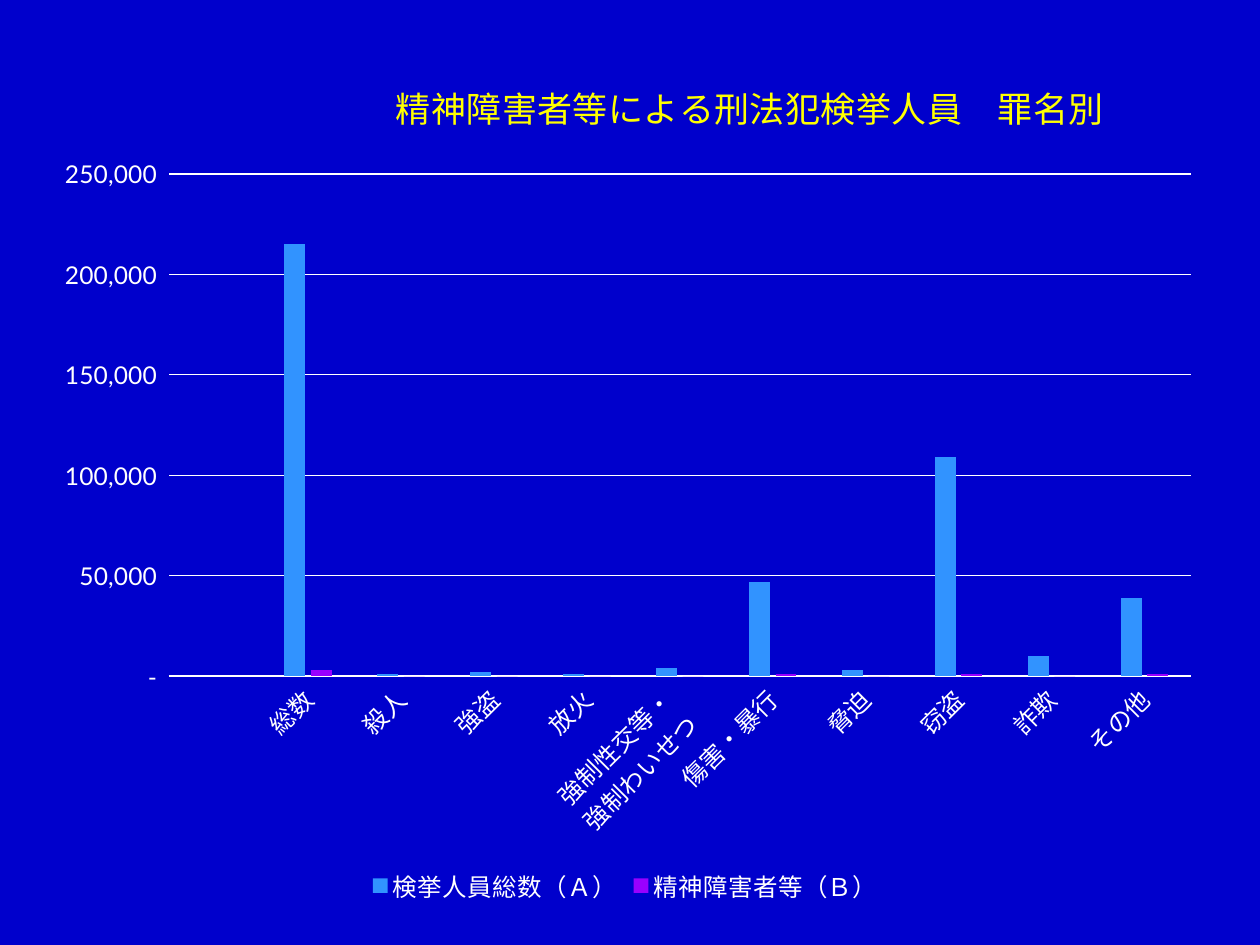
from dataclasses import dataclass

from lxml import etree
from pptx import Presentation
from pptx import util as u
from pptx.chart.data import CategoryChartData
from pptx.dml.color import RGBColor
from pptx.enum import chart as ch
from pptx.oxml.ns import qn


@dataclass(frozen=True)
class Theme:
    font: str = "Lato"
    background: str = "0000CC"
    ink: str = "FFFFFF"
    title: str = "FFFF00"
    series: tuple = ("3193FF", "9900FF")
    base_size: int = 10
    label_size: int = 14
    title_size: int = 20
    line_width: float = 0.75


THEME = Theme()
WIDTH, HEIGHT = u.Inches(10), u.Inches(7.5)
TITLE = "精神障害者等による刑法犯検挙人員　罪名別"
NUMBER_FORMAT = r'_(* #,##0_);_(* \(#,##0\);_(* "-"_);_(@_)'
CRIMES = {
    "": (None, None),
    "総数": (215000, 3000),
    "殺人": (1000, 0),
    "強盗": (2000, 0),
    "放火": (1000, 0),
    "強制性交等・\n強制わいせつ": (4000, 0),
    "傷害・暴行": (47000, 1000),
    "脅迫": (3000, 0),
    "窃盗": (109000, 1000),
    "詐欺": (10000, 0),
    "その他": (39000, 1000),
}
SERIES_NAMES = ("検挙人員総数（Ａ）", "精神障害者等（Ｂ）")


def style_font(font, size, color=THEME.ink):
    font.name = THEME.font
    font.size = u.Pt(size)
    font.bold = False
    font.color.rgb = RGBColor.from_string(color)


def style_line(line):
    line.color.rgb = RGBColor.from_string(THEME.ink)
    line.width = u.Pt(THEME.line_width)


def set_layout(parent, index, inner=False, **shares):
    for old in parent.findall(qn("c:layout")):
        parent.remove(old)
    layout = etree.Element(qn("c:layout"))
    manual = etree.SubElement(layout, qn("c:manualLayout"))
    settings = {"layoutTarget": "inner"} if inner else {}
    settings.update(xMode="edge", yMode="edge", **shares)
    for tag, value in settings.items():
        etree.SubElement(manual, qn(f"c:{tag}")).set("val", str(value))
    parent.insert(index, layout)


def add_crime_chart(s):
    data = CategoryChartData(number_format=NUMBER_FORMAT)
    data.categories = list(CRIMES)
    for name, values in zip(SERIES_NAMES, zip(*CRIMES.values())):
        data.add_series(name, values)
    frame = s.shapes.add_chart(
        ch.XL_CHART_TYPE.COLUMN_CLUSTERED,
        u.Inches(0.28), u.Inches(0.36), u.Inches(9.37), u.Inches(6.85), data,
    )
    chart = frame.chart
    style_font(chart.font, THEME.base_size)
    return chart


def format_title(chart):
    chart.has_title = True
    title = chart.chart_title
    r = title.text_frame.paragraphs[0].add_run()
    r.text = TITLE
    style_font(r.font, THEME.title_size, THEME.title)
    title.include_in_layout = False
    set_layout(title._element, 1, x=0.3, y=0.03)


def format_axes(chart):
    for axis in (chart.category_axis, chart.value_axis):
        axis.major_tick_mark = ch.XL_TICK_MARK.NONE
        axis.minor_tick_mark = ch.XL_TICK_MARK.NONE
        style_font(axis.tick_labels.font, THEME.label_size)

    crimes = chart.category_axis
    style_line(crimes.format.line)
    body = crimes._element.find(qn("c:txPr")).find(qn("a:bodyPr"))
    body.set("rot", str(-45 * 60000))
    body.set("vert", "horz")

    people = chart.value_axis
    people.minimum_scale, people.maximum_scale = 0, 250000
    people.major_unit = 50000
    people.has_major_gridlines = True
    style_line(people.major_gridlines.format.line)
    people.format.line.fill.background()
    people.tick_labels.number_format = NUMBER_FORMAT
    people.tick_labels.number_format_is_linked = False


def format_columns(chart):
    plot = chart.plots[0]
    plot.gap_width, plot.overlap = 219, -27
    plot.vary_by_categories = False
    for series, color in zip(plot.series, THEME.series):
        series.invert_if_negative = False
        series.format.fill.solid()
        series.format.fill.fore_color.rgb = RGBColor.from_string(color)
    plot_area = chart._chartSpace.chart.plotArea
    set_layout(plot_area, 0, inner=True, x=0.113, y=0.149, w=0.866, h=0.582)


def format_legend(chart):
    chart.has_legend = True
    chart.legend.position = ch.XL_LEGEND_POSITION.BOTTOM
    chart.legend.include_in_layout = False
    style_font(chart.legend.font, THEME.label_size)


def main():
    prs = Presentation()
    prs.slide_width, prs.slide_height = WIDTH, HEIGHT
    s = prs.slides.add_slide(prs.slide_layouts[6])
    s.background.fill.solid()
    s.background.fill.fore_color.rgb = RGBColor.from_string(THEME.background)
    chart = add_crime_chart(s)
    format_title(chart)
    format_axes(chart)
    format_columns(chart)
    format_legend(chart)
    prs.save("out.pptx")


if __name__ == "__main__":
    main()
